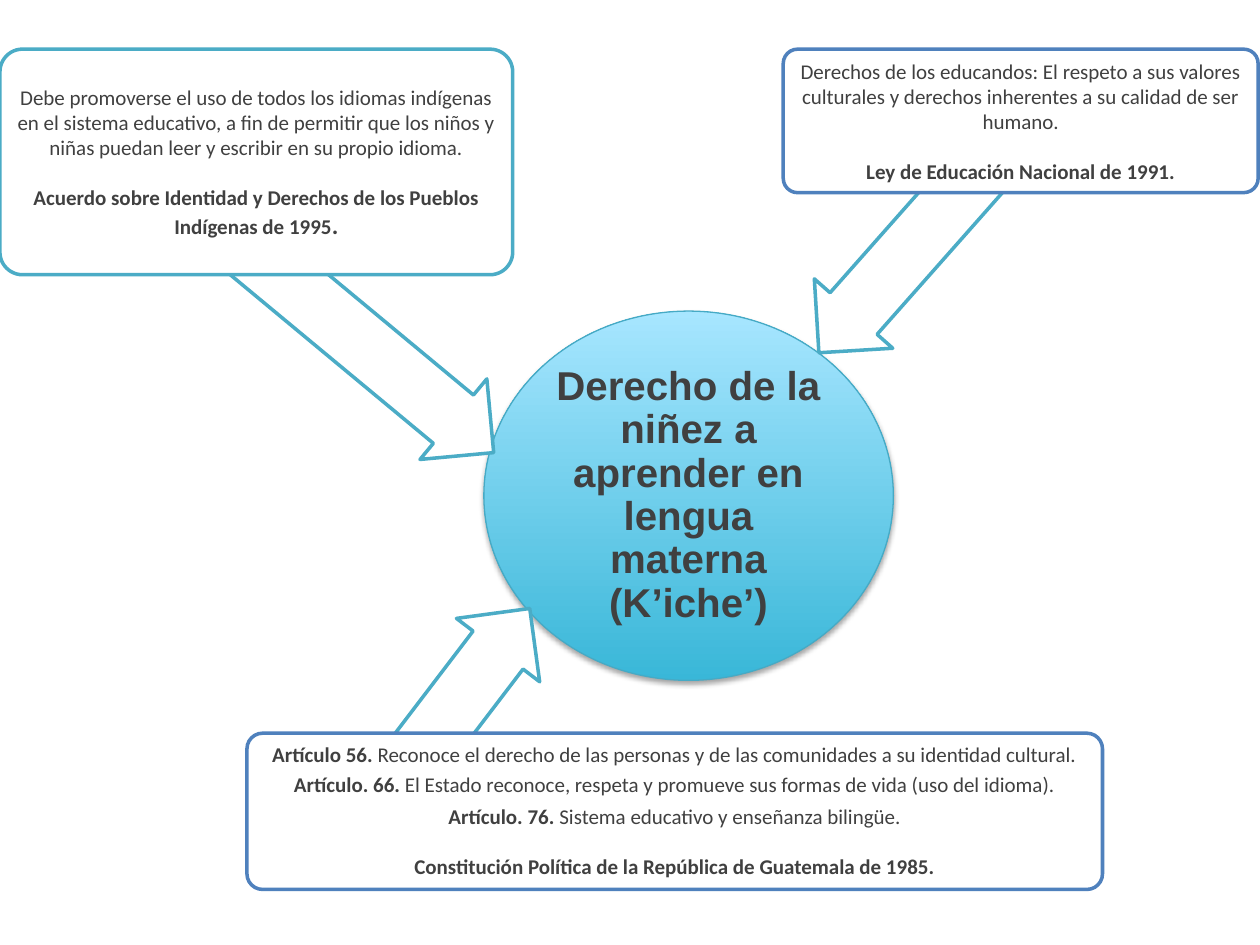
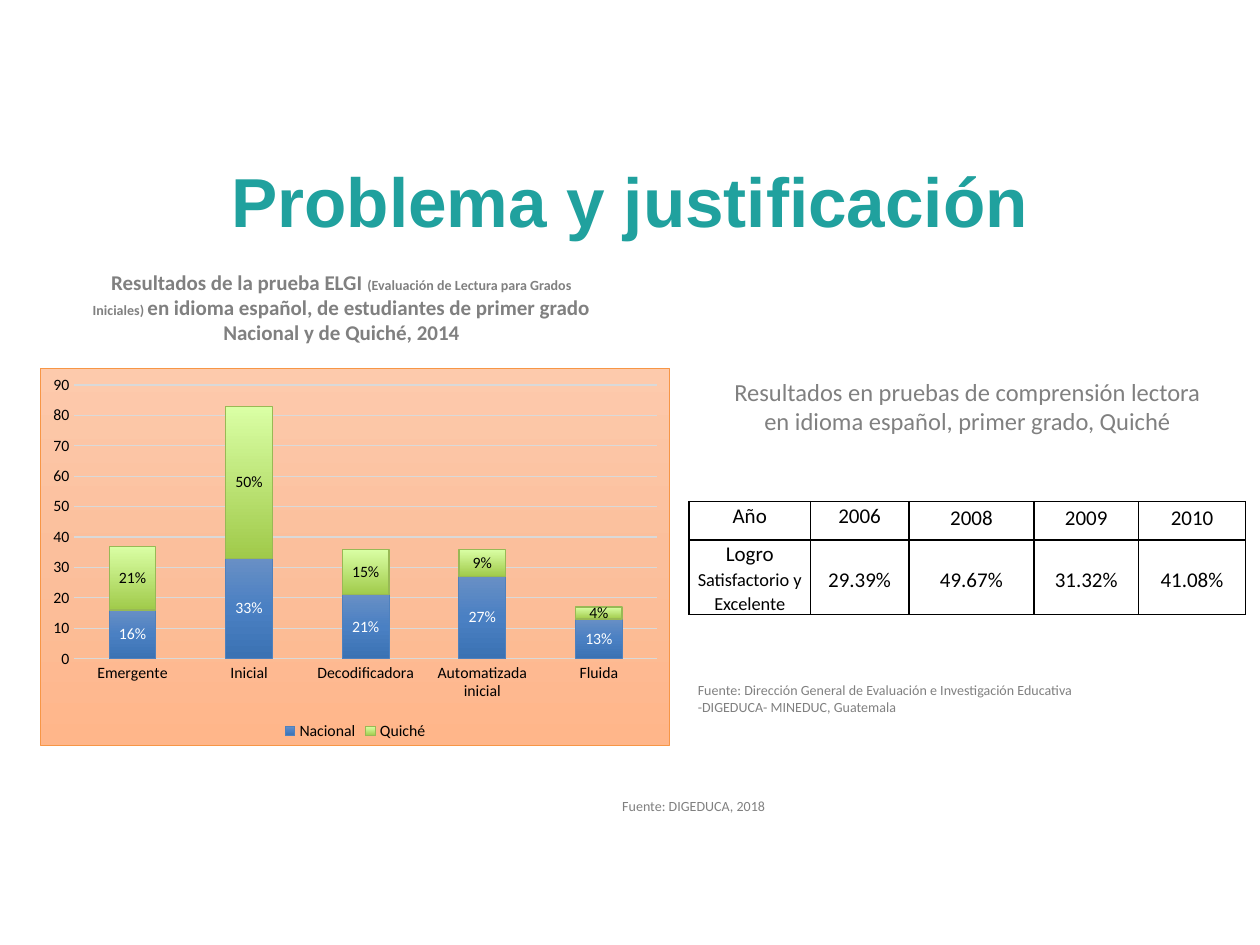
from dataclasses import dataclass
from lxml import etree
from pptx import Presentation
from pptx.chart.data import CategoryChartData
from pptx.dml.color import RGBColor
from pptx.dml.fill import FillFormat
from pptx.dml.line import LineFormat
from pptx.enum import chart as ch, shapes as sh, text as tx
from pptx.oxml import parse_xml
from pptx.oxml.ns import nsdecls, qn
from pptx.util import Pt


@dataclass(frozen=True)
class Theme:
    head: str = "Arial"
    body: str = "Calibri"
    ink: str = "404040"
    gray: str = "808080"
    black: str = "000000"
    white: str = "FFFFFF"
    teal: str = "20A19E"
    aqua: str = "4BACC6"
    blue: str = "4F81BD"
    rim: str = "46AAC5"
    leaf: str = "98B955"
    amber: str = "F79646"
    grid: str = "D9D9D9"
    hub: tuple = ((0, "39B7D8"), (100, "A7E6FF"))
    peach: tuple = ((0, "FDCAAC"), (50, "FBBF9C"), (100, "FFB68A"))
    blues: tuple = ((0, "688FC5"), (50, "4A80C3"), (100, "3B72B3"))
    greens: tuple = ((0, "A0CA4A"), (100, "DAFFA5"))
    title: float = 39.6
    core: float = 23
    lead: float = 14
    text: float = 12
    cell: float = 10.5
    axis: float = 9
    note: float = 8


T = Theme()
MID = tx.MSO_ANCHOR.MIDDLE
TOP = tx.MSO_ANCHOR.TOP
GAP = 14


def rgb(code):
    return RGBColor.from_string(code)


def node(parent, tag, **attrs):
    return etree.SubElement(parent, qn(tag), {k: str(v) for k, v in attrs.items()})


def blend(fill, owner, stops, angle):
    fill.gradient()
    fill.gradient_angle = 360 - angle
    box = next(owner.iter(qn("a:gsLst")))
    for old in list(box):
        box.remove(old)
    for place, code in stops:
        stop = node(box, "a:gs", pos=place * 1000)
        node(stop, "a:srgbClr", val=code)


def edge(line, color, width):
    line.color.rgb = rgb(color)
    line.width = Pt(width)


def style(font, size, color, bold=False, face=T.body):
    font.name = face
    font.size = Pt(size)
    font.bold = bold
    font.color.rgb = rgb(color)


def run(words, size=T.text, color=T.ink, bold=False, face=T.body):
    return words, size, color, bold, face


def para(*runs, lead=1.0, before=0, after=0):
    return runs, lead, before, after


def write(frame, paras, align=tx.PP_ALIGN.CENTER):
    for i, (runs, lead, before, after) in enumerate(paras):
        p = frame.add_paragraph() if i else frame.paragraphs[0]
        p.alignment = align
        p.line_spacing = lead
        p.space_before, p.space_after = Pt(before), Pt(after)
        for words, *look in runs:
            r = p.add_run()
            r.text = words
            style(r.font, *look)


def inset(frame, size):
    frame.margin_left = frame.margin_right = Pt(size)
    frame.margin_top = frame.margin_bottom = Pt(size)


def shape(slide, kind, place, color, width):
    item = slide.shapes.add_shape(kind, *map(Pt, place))
    item.shadow.inherit = False
    item.fill.solid()
    item.fill.fore_color.rgb = rgb(T.white)
    edge(item.line, color, width)
    return item


def fit(item, paras):
    frame = item.text_frame
    frame.word_wrap = True
    frame.vertical_anchor = MID
    inset(frame, 1.5)
    write(frame, paras)


def card(slide, place, color, paras):
    item = shape(slide, sh.MSO_SHAPE.ROUNDED_RECTANGLE, place, color, 2)
    item.adjustments[0] = 0.1
    fit(item, paras)


def arrow(slide, place, turn):
    item = shape(slide, sh.MSO_SHAPE.LEFT_ARROW, place, T.aqua, 2)
    item.adjustments[0], item.adjustments[1] = 0.6, 0.5
    item.rotation = turn


def hub(slide, place, paras):
    item = shape(slide, sh.MSO_SHAPE.OVAL, place, T.rim, 0.75)
    blend(item.fill, item._element, T.hub, 270)
    glow = next(item._element.iter(qn("a:effectLst")))
    drop = node(glow, "a:outerShdw", blurRad=Pt(3.1), dist=Pt(1.8), dir=5400000, rotWithShape=0)
    shade = node(drop, "a:srgbClr", val=T.black)
    node(shade, "a:alpha", val=35000)
    fit(item, paras)


def label(slide, place, paras, align=tx.PP_ALIGN.CENTER, wrap=True, anchor=TOP):
    frame = slide.shapes.add_textbox(*map(Pt, place)).text_frame
    frame.word_wrap = wrap
    frame.vertical_anchor = anchor
    write(frame, paras, align)


def border(cell):
    props = cell._tc.get_or_add_tcPr()
    for side in "LRTB":
        line = node(props, f"a:ln{side}", w=Pt(1))
        node(node(line, "a:solidFill"), "a:srgbClr", val=T.black)


def table(slide, place, cols, rows, data):
    frame = slide.shapes.add_table(len(rows), len(cols), *map(Pt, place))
    grid = frame.table
    grid.first_row = grid.horz_banding = False
    for col, width in zip(grid.columns, cols):
        col.width = Pt(width)
    for i, (row, height) in enumerate(zip(grid.rows, rows)):
        row.height = Pt(height)
        for j, (cell, lines) in enumerate(zip(row.cells, data[i])):
            border(cell)
            cell.fill.background()
            inset(cell, 0)
            cell.margin_top = Pt(1 if j > 1 else 0) if not i else Pt(3 if j else 0)
            cell.vertical_anchor = MID if i and j else TOP
            write(cell.text_frame, [
                para(run(words, size, T.black), lead=1.07) for words, size in lines
            ])


def chart(slide, place, cats, series):
    data = CategoryChartData(number_format='0"%"')
    data.categories = cats
    for name, vals, *_ in series:
        data.add_series(name, vals)
    kind = ch.XL_CHART_TYPE.COLUMN_STACKED
    plan = slide.shapes.add_chart(kind, *map(Pt, place), data).chart
    style(plan.font, 10, T.black)
    plan.has_title = False
    plan.has_legend = True
    plan.legend.position = ch.XL_LEGEND_POSITION.BOTTOM
    plan.legend.include_in_layout = False
    style(plan.legend.font, T.axis, T.black)

    back = parse_xml(f"<c:spPr {nsdecls('c', 'a')}/>")
    plan._chartSpace.find(qn("c:chart")).addnext(back)
    blend(FillFormat.from_fill_parent(back), back, T.peach, 90)
    edge(LineFormat(back), T.amber, 0.5)

    cat, val = plan.category_axis, plan.value_axis
    for axis in (cat, val):
        axis.major_tick_mark = axis.minor_tick_mark = ch.XL_TICK_MARK.NONE
        style(axis.tick_labels.font, T.axis, T.black)
    edge(cat.format.line, T.grid, 0.75)
    val.format.line.fill.background()
    val.tick_labels.number_format = "0"
    val.tick_labels.number_format_is_linked = False
    val.minimum_scale, val.maximum_scale, val.major_unit = 0, 90, 10
    edge(val.major_gridlines.format.line, T.grid, 0.75)

    plot = plan.plots[0]
    plot.gap_width, plot.overlap = 150, 100
    plot.vary_by_categories = False
    for bar, (_, _, stops, angle, rim, width, ink) in zip(plot.series, series):
        blend(bar.format.fill, bar._element, stops, angle)
        edge(bar.format.line, rim, width)
        tags = bar.data_labels
        tags.show_value = True
        tags.number_format = '0"%"'
        tags.number_format_is_linked = False
        style(tags.font, T.axis, ink)


def rights(slide):
    hub(slide, (276.5, 177.8, 234, 211), [
        para(run("Derecho de la niñez a aprender en lengua materna (K’iche’)",
                 T.core, T.ink, True, T.head), lead=0.9)])
    arrow(slide, (71.3, 152.6, 238.3, 59.8), 219.7)
    card(slide, (0, 28.1, 293, 128.9), T.aqua, [
        para(run("Debe promoverse el uso de todos los idiomas indígenas en el sistema "
                 "educativo, a fin de permitir que los niños y niñas puedan leer y "
                 "escribir en su propio idioma.")),
        para(run("Acuerdo sobre Identidad y Derechos de los Pueblos Indígenas de 1995",
                 bold=True), run(".", T.lead, bold=True), before=GAP)])
    arrow(slide, (210.2, 363.6, 115.2, 59.8), 127.3)
    card(slide, (141.1, 419, 488.9, 89.3), T.blue, [
        para(run("Artículo 56. ", bold=True),
             run("Reconoce el derecho de las personas y de las comunidades a su "
                 "identidad cultural."), lead=0.9, after=4),
        para(run("Artículo. 66. ", bold=True),
             run("El Estado reconoce, respeta y promueve sus formas de vida "
                 "(uso del idioma)."), lead=0.9, after=4),
        para(run("Artículo. 76. ", bold=True),
             run("Sistema educativo y enseñanza bilingüe.")),
        para(run("Constitución Política de la República de Guatemala de 1985.",
                 bold=True), before=GAP)])
    arrow(slide, (439.9, 109.4, 166.3, 59.8), 311.5)
    card(slide, (447.6, 28.1, 271.4, 82), T.blue, [
        para(run("Derechos de los educandos: El respeto a sus valores culturales y "
                 "derechos inherentes a su calidad de ser humano.")),
        para(run("Ley de Educación Nacional de 1991.", bold=True), before=GAP)])


def problem(slide):
    label(slide, (36, 69, 648, 90), [
        para(run("Problema y justificación", T.title, T.teal, True, T.head))], anchor=MID)
    label(slide, (391.7, 385.9, 247.7, 26.6), [
        para(run(words, T.note, T.gray)) for words in (
            "Fuente: Dirección General de Evaluación e Investigación Educativa",
            "-DIGEDUCA- MINEDUC, Guatemala")], tx.PP_ALIGN.LEFT)
    label(slide, (411.1, 211.7, 283.7, 41), [
        para(run(words, T.lead, T.gray)) for words in (
            "Resultados en pruebas de comprensión lectora",
            "en idioma español, primer grado, Quiché")], wrap=False)
    years = ["Año", "2006", "2008", "2009", "2010"]
    rates = ["29.39%", "49.67%", "31.32%", "41.08%"]
    first = [("Logro", T.text), ("Satisfactorio y Excelente", T.cell)]
    table(slide, (393.8, 286.6, 318, 64.5), (69.3, 56.3, 71.5, 59.7, 61.2), (22, 42.5), [
        [[(year, T.text)] for year in years],
        [first] + [[(rate, T.text)] for rate in rates]])
    label(slide, (348.5, 452.2, 247.7, 17.3), [
        para(run("Fuente: DIGEDUCA, 2018", T.note, T.gray))], tx.PP_ALIGN.LEFT)
    chart(slide, (23, 210.2, 360, 216),
          ["Emergente", "Inicial", "Decodificadora", "Automatizada inicial", "Fluida"], [
              ("Nacional", (16, 33, 21, 27, 13), T.blues, 90, T.blue, 0.5, T.white),
              ("Quiché", (21, 50, 15, 9, 4), T.greens, 270, T.leaf, 0.75, T.black)])
    # noqa
    label(slide, (41.8, 150.5, 306.7, 51), [
        para(run("Resultados de la prueba ELGI ", T.text, T.gray, True),
             run("(Evaluación de Lectura para Grados Iniciales) ", T.note, T.gray, True),
             run("en idioma español, de estudiantes de primer grado", T.text, T.gray, True)),
        para(run("Nacional y de Quiché, 2014", T.text, T.gray, True))])


def main():
    deck = Presentation()
    deck.slide_width, deck.slide_height = Pt(720), Pt(540)
    for build in (rights, problem):
        build(deck.slides.add_slide(deck.slide_layouts[6]))
    deck.save("out.pptx")


if __name__ == "__main__":
    main()
